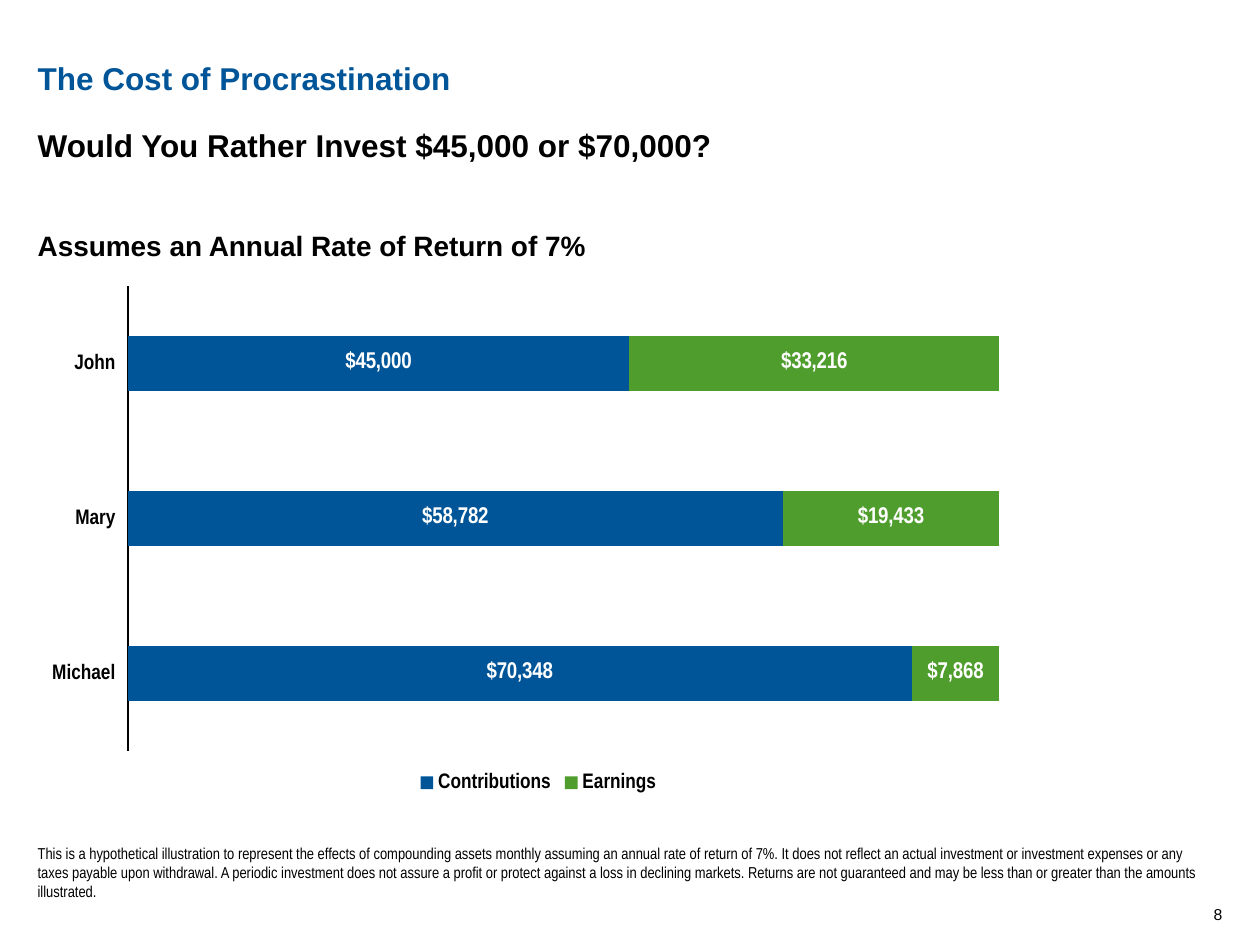
from lxml.etree import SubElement
from pptx import Presentation
from pptx.chart.data import CategoryChartData
from pptx.dml.color import RGBColor as RGB
from pptx.enum.chart import XL_CHART_TYPE as CT, XL_LABEL_POSITION as LP
from pptx.enum.chart import XL_LEGEND_POSITION as LEG, XL_TICK_LABEL_POSITION as TLP
from pptx.enum.chart import XL_TICK_MARK as TM
from pptx.enum.text import MSO_ANCHOR as ANC, PP_ALIGN as AL
from pptx.oxml.ns import qn
from pptx.util import Cm, Pt

TITLE = "The Cost of Procrastination"
QUESTION = "Would You Rather Invest $45,000 or $70,000?"
ASSUMPTION = "Assumes an Annual Rate of Return of 7%"
DISCLAIMER = (
    "This is a hypothetical illustration to represent the effects of compounding assets monthly "
    "assuming an annual rate of return of 7%. It does not reflect an actual investment or "
    "investment expenses or any taxes payable upon withdrawal. A periodic investment does not "
    "assure a profit or protect against a loss in declining markets. Returns are not guaranteed "
    "and may be less than or greater than the amounts illustrated."
)
PAGE = "8"
SAVERS = ["Michael", "Mary", "John"]
SERIES = [
    ("Contributions", (70348, 58782, 45000), "blue"),
    ("Earnings", (7868, 19433, 33216), "green"),
]
THEME = {
    "blue": RGB(0x00, 0x55, 0x98),
    "green": RGB(0x4E, 0x9D, 0x2D),
    "black": RGB(0, 0, 0),
    "white": RGB(255, 255, 255),
    "font": "Arial",
    "narrow": "Arial Narrow",
    "heading": 18,
    "subheading": 16,
    "label": 13,
    "axis": 12,
    "chart": 10,
    "note": 9,
}
LEFT = 0.76
PLOT = {"x": 0.09, "y": 0.02, "w": 0.89, "h": 0.89}


def style(font, size, color="black", face="font", bold=False):
    font.name = THEME[face]
    font.size = Pt(THEME[size])
    font.color.rgb = THEME[color]
    font.bold = bold


def add_text(s, box, lines, anchor=ANC.TOP, align=AL.LEFT, gap=0):
    tf = s.shapes.add_textbox(*map(Cm, box)).text_frame
    tf.word_wrap = True
    tf.vertical_anchor = anchor
    tf.margin_left = tf.margin_right = tf.margin_top = tf.margin_bottom = 0
    for i, (text, look) in enumerate(lines):
        p = tf.add_paragraph() if i else tf.paragraphs[0]
        p.alignment = align
        if i:
            p.space_before = Pt(gap)
        r = p.add_run()
        r.text = text
        style(r.font, **look)


def set_plot_layout(chart):
    area = chart._chartSpace.find(".//" + qn("c:plotArea"))
    for old in area.findall(qn("c:layout")):
        area.remove(old)
    layout = SubElement(area, qn("c:layout"))
    area.insert(0, layout)
    manual = SubElement(layout, qn("c:manualLayout"))
    settings = {"layoutTarget": "inner", "xMode": "edge", "yMode": "edge", **PLOT}
    for tag, val in settings.items():
        SubElement(manual, qn("c:" + tag)).set("val", str(val))


def add_savings_chart(s, box):
    data = CategoryChartData(number_format="#,##0")
    data.categories = SAVERS
    for name, values, _ in SERIES:
        data.add_series(name, values)
    chart = s.shapes.add_chart(CT.BAR_STACKED, *map(Cm, box), data).chart
    chart.has_title = False
    style(chart.font, "chart")
    set_plot_layout(chart)

    chart.has_legend = True
    chart.legend.position = LEG.BOTTOM
    chart.legend.include_in_layout = False
    style(chart.legend.font, "axis", face="narrow", bold=True)

    cat = chart.category_axis
    cat.major_tick_mark = cat.minor_tick_mark = TM.NONE
    cat.tick_label_position = TLP.LOW
    cat.format.line.color.rgb = THEME["black"]
    cat.format.line.width = Pt(1)
    style(cat.tick_labels.font, "axis", face="narrow", bold=True)

    val = chart.value_axis
    val.minimum_scale, val.maximum_scale = 0, 80000
    val.has_major_gridlines = False
    val.visible = False

    plot = chart.plots[0]
    plot.gap_width, plot.overlap = 182, 100
    plot.vary_by_categories = False
    for series, (_, _, color) in zip(plot.series, SERIES):
        series.format.fill.solid()
        series.format.fill.fore_color.rgb = THEME[color]
        labels = series.data_labels
        labels.show_value = True
        labels.number_format = '"$"#,##0'
        labels.number_format_is_linked = False
        labels.position = LP.CENTER
        style(labels.font, "label", "white", "narrow", True)


def main():
    prs = Presentation()
    prs.slide_width, prs.slide_height = Cm(25.4), Cm(19.05)
    s = prs.slides.add_slide(prs.slide_layouts[6])
    heading = {"size": "heading", "bold": True}
    subheading = {"size": "subheading", "bold": True}
    add_text(s, (LEFT, 1.19, 17.78, 1.2), [(TITLE, {**heading, "color": "blue"})])
    add_text(s, (LEFT, 2.54, 21.59, 3),
             [(QUESTION, heading), (ASSUMPTION, subheading)], gap=36.8)
    add_savings_chart(s, (LEFT, 5.56, 20.19, 10.52))
    add_text(s, (LEFT, 17.02, 23.62, 1.14),
             [(DISCLAIMER, {"size": "note", "face": "narrow"})], ANC.BOTTOM)
    add_text(s, (23.62, 18.16, 1.02, 0.46), [(PAGE, {"size": "note"})], ANC.BOTTOM, AL.RIGHT)
    prs.save("out.pptx")


if __name__ == "__main__":
    main()
